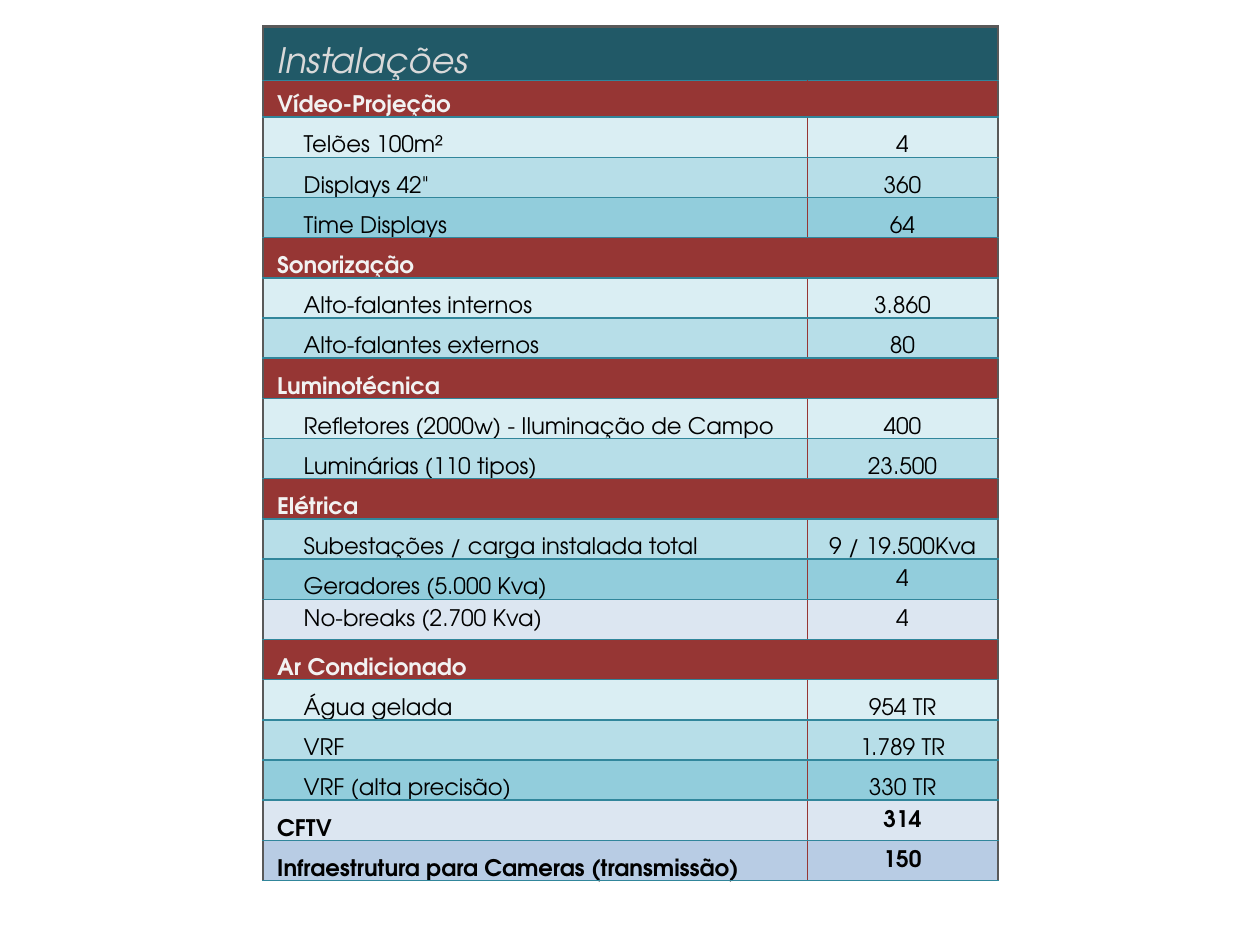
from dataclasses import dataclass

from lxml import etree
from pptx import Presentation
from pptx.dml.color import RGBColor
from pptx.enum.text import MSO_ANCHOR, PP_ALIGN
from pptx.oxml.ns import qn
from pptx.util import Inches, Pt

BOTTOM, MIDDLE = MSO_ANCHOR.BOTTOM, MSO_ANCHOR.MIDDLE
LEFT, CENTER = PP_ALIGN.LEFT, PP_ALIGN.CENTER
BLANK_LAYOUT = 6


@dataclass(frozen=True)
class Theme:
    """Fonts, type sizes, colours and border styles of the deck."""

    font: str = "TeX Gyre Adventor"
    title_size: int = 20
    body_size: int = 13
    title_fill: str = "215967"
    title_text: str = "D9D9D9"
    section_fill: str = "963634"
    section_text: str = "F2F2F2"
    body_text: str = "000000"
    pale: str = "DAEEF3"
    light: str = "B7DEE8"
    medium: str = "92CDDC"
    mist: str = "DCE6F1"
    steel: str = "B8CCE4"
    frame: tuple = ("595959", 1.5)
    rule: tuple = ("31869B", 1)
    divider: tuple = ("963634", 0.5)


THEME = Theme()
TITLE = "Instalações"
SECTION, ITEM, TOTAL = "section", "item", "total"
MARGIN, INDENT, HAIR = 0.11, 0.32, 0.01

ROWS = [
    (SECTION, "Vídeo-Projeção", "", THEME.section_fill, BOTTOM, BOTTOM),
    (ITEM, "Telões 100m²", "4", THEME.pale, BOTTOM, BOTTOM),
    (ITEM, 'Displays 42"', "360", THEME.light, BOTTOM, BOTTOM),
    (ITEM, "Time Displays", "64", THEME.medium, BOTTOM, BOTTOM),
    (SECTION, "Sonorização", "", THEME.section_fill, BOTTOM, BOTTOM),
    (ITEM, "Alto-falantes internos", "3.860", THEME.pale, BOTTOM, BOTTOM),
    (ITEM, "Alto-falantes externos", "80", THEME.light, BOTTOM, BOTTOM),
    (SECTION, "Luminotécnica", "", THEME.section_fill, BOTTOM, BOTTOM),
    (ITEM, "Refletores (2000w) - Iluminação de Campo", "400", THEME.pale, BOTTOM, BOTTOM),
    (ITEM, "Luminárias (110 tipos)", "23.500", THEME.light, BOTTOM, BOTTOM),
    (SECTION, "Elétrica", "", THEME.section_fill, BOTTOM, BOTTOM),
    (ITEM, "Subestações / carga instalada total", "9 / 19.500Kva", THEME.light, BOTTOM, BOTTOM),
    (ITEM, "Geradores (5.000 Kva)", "4", THEME.medium, BOTTOM, MIDDLE),
    (ITEM, "No-breaks (2.700 Kva)", "4", THEME.mist, MIDDLE, MIDDLE),
    (SECTION, "Ar Condicionado", "", THEME.section_fill, BOTTOM, BOTTOM),
    (ITEM, "Água gelada", "954 TR", THEME.pale, BOTTOM, BOTTOM),
    (ITEM, "VRF", "1.789 TR", THEME.light, BOTTOM, BOTTOM),
    (ITEM, "VRF (alta precisão)", "330 TR", THEME.medium, BOTTOM, BOTTOM),
    (TOTAL, "CFTV", "314", THEME.mist, BOTTOM, MIDDLE),
    (TOTAL, "Infraestrutura para Cameras (transmissão)", "150", THEME.steel, BOTTOM, MIDDLE),
]


def set_borders(cell, left, top, right, bottom):
    """Draw the four cell borders, each a colour and a width in points."""
    properties = cell._tc.get_or_add_tcPr()
    sides = zip(("a:lnL", "a:lnR", "a:lnT", "a:lnB"), (left, right, top, bottom))
    for position, (tag, (color, width)) in enumerate(sides):
        line = etree.Element(qn(tag), w=str(Pt(width)))
        fill = etree.SubElement(line, qn("a:solidFill"))
        etree.SubElement(fill, qn("a:srgbClr"), val=color)
        properties.insert(position, line)


def fill_cell(cell, text, fill, color, size=THEME.body_size, inset=HAIR,
              anchor=BOTTOM, align=LEFT, bold=False, italic=False):
    """Write and style the text and background of one cell."""
    cell.fill.solid()
    cell.fill.fore_color.rgb = RGBColor.from_string(fill)
    cell.margin_left = Inches(inset)
    cell.margin_top = cell.margin_right = Inches(HAIR)
    cell.margin_bottom = 0
    cell.vertical_anchor = anchor
    para = cell.text_frame.paragraphs[0]
    para.alignment = align
    font = para.font
    font.name, font.size = THEME.font, Pt(size)
    font.bold, font.italic = bold, italic
    font.color.rgb = RGBColor.from_string(color)
    if text:
        para.add_run().text = text
    else:
        etree.SubElement(para._p, qn("a:endParaRPr"), sz=str(size * 100))


def add_installations_table(page, left, top, width, height):
    """Place the table of installations in the given box."""
    frame = page.shapes.add_table(len(ROWS) + 1, 2, left, top, width, height)
    table = frame.table
    for column, share in zip(table.columns, (0.74, 0.26)):
        column.width = int(width * share)
    lead_heights = [Inches(0.43), Inches(0.29)]
    row_height = (height - sum(lead_heights)) // (len(ROWS) - 1)
    for index, row in enumerate(table.rows):
        row.height = lead_heights[index] if index < len(lead_heights) else row_height

    title, title_end = table.cell(0, 0), table.cell(0, 1)
    title.merge(title_end)
    fill_cell(title, TITLE, THEME.title_fill, THEME.title_text, THEME.title_size,
              MARGIN, italic=True)
    for cell in (title, title_end):
        set_borders(cell, THEME.frame, THEME.frame, THEME.frame, THEME.rule)

    for index, (kind, name, value, fill, name_anchor, value_anchor) in enumerate(ROWS, 1):
        label, amount = table.cell(index, 0), table.cell(index, 1)
        color = THEME.section_text if kind == SECTION else THEME.body_text
        inset = INDENT if kind == ITEM else MARGIN
        bold = kind != ITEM
        fill_cell(label, name, fill, color, inset=inset, anchor=name_anchor, bold=bold)
        fill_cell(amount, value, fill, color, anchor=value_anchor, align=CENTER, bold=bold)
        set_borders(label, THEME.frame, THEME.rule, THEME.divider, THEME.rule)
        set_borders(amount, THEME.divider, THEME.rule, THEME.frame, THEME.rule)


def main():
    """Build the deck and save it."""
    deck = Presentation()
    deck.slide_width, deck.slide_height = Inches(10), Inches(7.5)
    page = deck.slides.add_slide(deck.slide_layouts[BLANK_LAYOUT])
    add_installations_table(page, Inches(2.09), Inches(0.21), Inches(5.83), Inches(6.78))
    deck.save("out.pptx")


if __name__ == "__main__":
    main()
